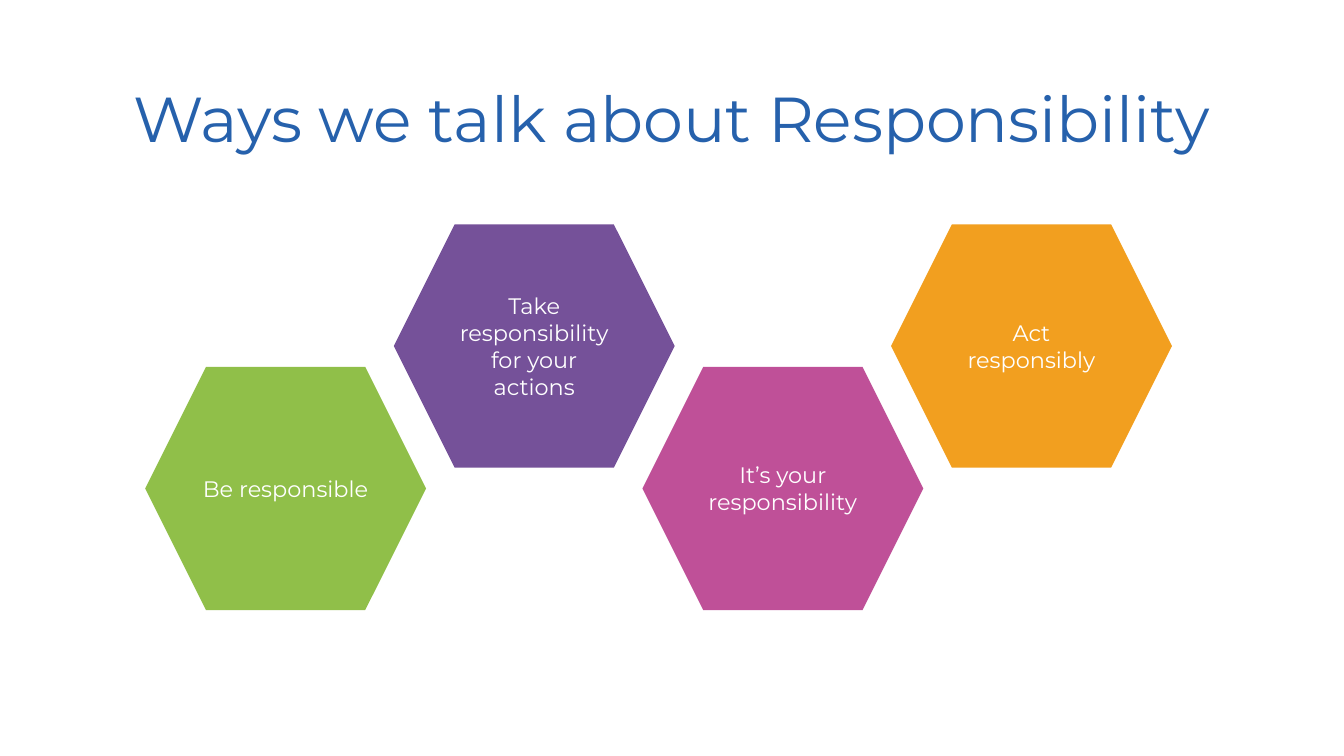
"""Build a slide with a title above a zigzag row of four hexagons."""
from dataclasses import dataclass

from pptx import Presentation
from pptx.dml.color import RGBColor
from pptx.enum import shapes, text
from pptx.slide import Slide
from pptx.text.text import TextFrame
from pptx.util import Inches, Pt


@dataclass(frozen=True)
class Theme:
    font: str = "Montserrat"
    title_size: int = 34
    label_size: int = 12
    title_color: str = "2661AC"
    label_color: str = "FFFFFF"


@dataclass(frozen=True)
class Phrase:
    label: str
    color: str


THEME = Theme()
PHRASES = (
    Phrase("Be responsible", "90BF49"),
    Phrase("Take responsibility for your actions", "755199"),
    Phrase("It’s your responsibility", "BF5098"),
    Phrase("Act responsibly", "F29F1F"),
)
SLIDE_WIDTH = 10
SLIDE_HEIGHT = SLIDE_WIDTH * 9 / 16
ROW_LEFT, COLUMN_STEP = 1.08, 1.85
ROW_TOPS = (2.73, 1.67)
HEXAGON_WIDTH, HEXAGON_HEIGHT = 2.09, 1.81


def write_centered(frame: TextFrame, content: str, size: int, color: str) -> None:
    frame.word_wrap = True
    paragraph = frame.paragraphs[0]
    paragraph.text = content
    paragraph.alignment = text.PP_ALIGN.CENTER
    paragraph.font.name = THEME.font
    paragraph.font.size = Pt(size)
    paragraph.font.color.rgb = RGBColor.from_string(color)


def add_title(slide: Slide, content: str) -> None:
    box = slide.shapes.add_textbox(Inches(0.34), Inches(0.49), Inches(9.32), Inches(0.63))
    frame = box.text_frame
    frame.margin_left = frame.margin_right = Inches(0.1)
    frame.margin_top = frame.margin_bottom = Inches(0.1)
    frame.vertical_anchor = text.MSO_ANCHOR.TOP
    write_centered(frame, content, THEME.title_size, THEME.title_color)


def add_hexagon(slide: Slide, phrase: Phrase, left: float, top: float) -> None:
    hexagon = slide.shapes.add_shape(
        shapes.MSO_SHAPE.HEXAGON,
        Inches(left), Inches(top), Inches(HEXAGON_WIDTH), Inches(HEXAGON_HEIGHT),
    )
    hexagon.shadow.inherit = False
    hexagon.fill.solid()
    hexagon.fill.fore_color.rgb = RGBColor.from_string(phrase.color)
    hexagon.line.fill.background()
    hexagon.text_frame.vertical_anchor = text.MSO_ANCHOR.MIDDLE
    write_centered(hexagon.text_frame, phrase.label, THEME.label_size, THEME.label_color)


def main() -> None:
    presentation = Presentation()
    presentation.slide_width = Inches(SLIDE_WIDTH)
    presentation.slide_height = Inches(SLIDE_HEIGHT)
    slide = presentation.slides.add_slide(presentation.slide_layouts[6])
    add_title(slide, "Ways we talk about Responsibility")
    for index, phrase in enumerate(PHRASES):
        add_hexagon(slide, phrase, ROW_LEFT + index * COLUMN_STEP, ROW_TOPS[index % 2])
    presentation.save("out.pptx")


if __name__ == "__main__":
    main()
